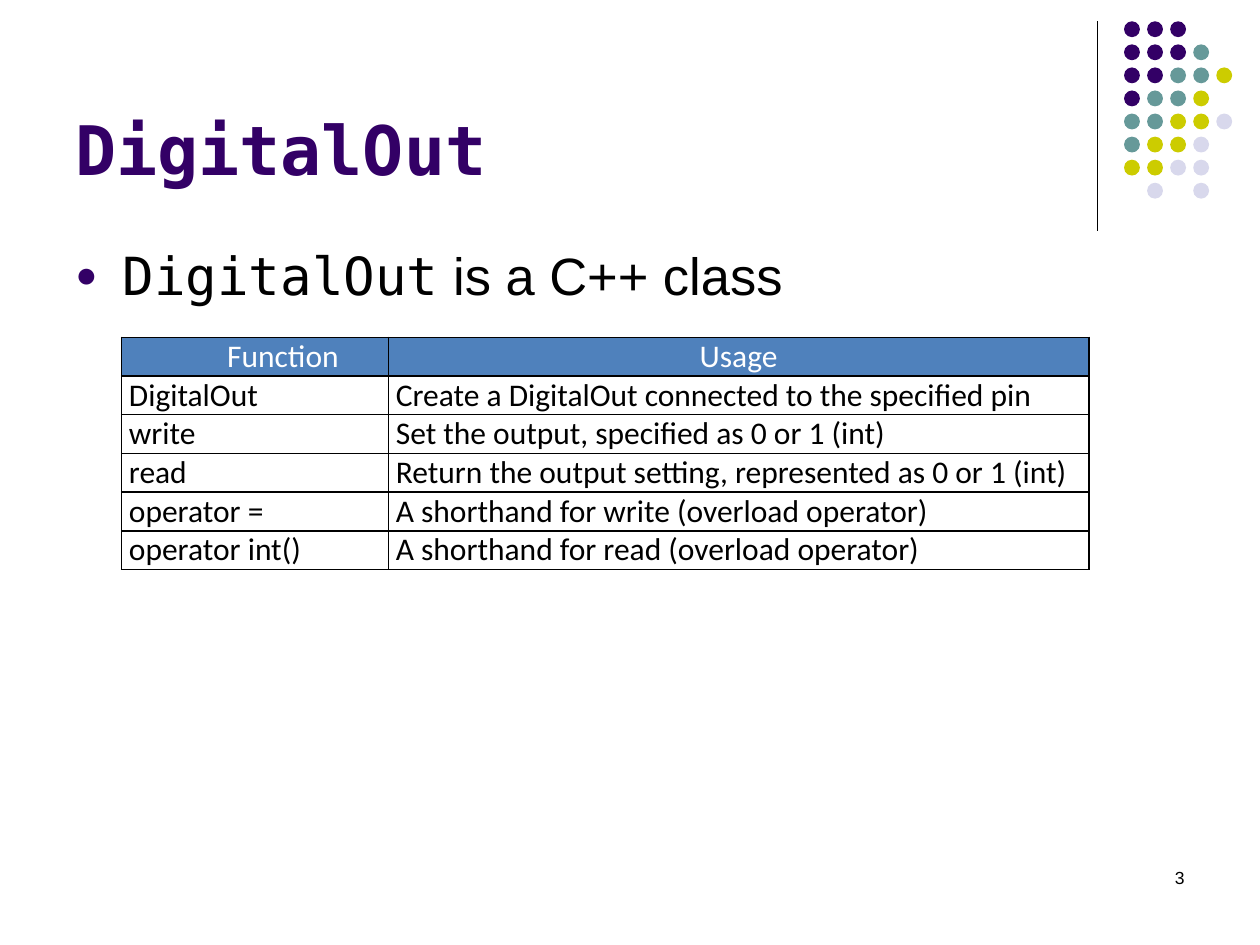
from lxml.etree import SubElement
from pptx import Presentation
from pptx.dml.color import RGBColor
from pptx.enum.shapes import MSO_CONNECTOR, MSO_SHAPE
from pptx.enum.text import MSO_ANCHOR, PP_ALIGN
from pptx.oxml import parse_xml
from pptx.oxml.ns import nsdecls, qn
from pptx.util import Cm, Pt

BLACK = RGBColor(0x00, 0x00, 0x00)
WHITE = RGBColor(0xFF, 0xFF, 0xFF)
PURPLE = RGBColor(0x33, 0x00, 0x66)
TEAL = RGBColor(0x66, 0x99, 0x99)
LIME = RGBColor(0xCC, 0xCC, 0x00)
LILAC = RGBColor(0xD8, 0xD8, 0xEC)
BLUE = RGBColor(0x4F, 0x81, 0xBC)
MONO, SANS, BODY = "DejaVu Sans Mono", "Arial", "Calibri"

TITLE = "DigitalOut"
POINT = [("DigitalOut", MONO), (" is a C++ class", SANS)]
PAGE = "3"
ROWS = [
    ("Function", "Usage"),
    ("DigitalOut", "Create a DigitalOut connected to the specified pin"),
    ("write", "Set the output, specified as 0 or 1 (int)"),
    ("read", "Return the output setting, represented as 0 or 1 (int)"),
    ("operator =", "A shorthand for write (overload operator)"),
    ("operator int()", "A shorthand for read (overload operator)"),
]
COLS = [5.38, 14.12]
ROW_H = 0.78
DOTS = ["PPP", "PPPT", "PPTTL", "PTTL", "TTLLV", "TLLV", "LLVV", " V V"]
HUES = {"P": PURPLE, "T": TEAL, "L": LIME, "V": LILAC}
DOT, STEP = 0.32, 0.465


def write(par, text, font=SANS, size=18, color=BLACK, bold=False,
          align=PP_ALIGN.LEFT, left=0, hang=0):
    run = par.add_run()
    run.text = text
    run.font.name = font
    run.font.size = Pt(size)
    run.font.bold = bold
    run.font.color.rgb = color
    par.alignment = align
    props = par._p.get_or_add_pPr()
    props.set("marL", str(Cm(left)))
    props.set("indent", str(Cm(-hang)))


def add_box(slide, x, y, w, h, anchor=MSO_ANCHOR.TOP):
    frame = slide.shapes.add_textbox(Cm(x), Cm(y), Cm(w), Cm(h)).text_frame
    frame.word_wrap = True
    frame.vertical_anchor = anchor
    return frame.paragraphs[0]


def add_mark(par):
    props = par._p.get_or_add_pPr()
    hue = SubElement(props, qn("a:buClr"))
    SubElement(hue, qn("a:srgbClr"), val=str(PURPLE))
    SubElement(props, qn("a:buSzPct"), val="70000")
    SubElement(props, qn("a:buFont"), typeface=SANS)
    SubElement(props, qn("a:buChar"), char="●")


def add_edge(cell):
    props = cell._tc.get_or_add_tcPr()
    for pos, side in enumerate("LRTB"):
        props.insert(pos, parse_xml(
            f'<a:ln{side} {nsdecls("a")} w="{Pt(1)}"><a:solidFill>'
            f'<a:srgbClr val="{BLACK}"/></a:solidFill></a:ln{side}>'))


def add_dots(slide):
    for row, line in enumerate(DOTS):
        for col, key in enumerate(line):
            if key in HUES:
                dot = slide.shapes.add_shape(
                    MSO_SHAPE.OVAL, Cm(22.66 + col * STEP),
                    Cm(0.43 + row * STEP), Cm(DOT), Cm(DOT))
                dot.shadow.inherit = False
                dot.fill.solid()
                dot.fill.fore_color.rgb = HUES[key]
                dot.line.fill.background()


def add_rule(slide):
    rule = slide.shapes.add_connector(
        MSO_CONNECTOR.STRAIGHT, Cm(22.12), Cm(0.43), Cm(22.12), Cm(4.65))
    rule.line.color.rgb = BLACK
    rule.line.width = Pt(0.75)
    SubElement(rule._element.spPr, qn("a:effectLst"))


def add_grid(slide):
    grid = slide.shapes.add_table(
        len(ROWS), len(COLS), Cm(2.45), Cm(6.8),
        Cm(sum(COLS)), Cm(ROW_H * len(ROWS))).table
    grid.first_row = grid.horz_banding = False
    for col, width in zip(grid.columns, COLS):
        col.width = Cm(width)
    for r, texts in enumerate(ROWS):
        grid.rows[r].height = Cm(ROW_H)
        for c, text in enumerate(texts):
            cell = grid.cell(r, c)
            cell.margin_left = cell.margin_right = 0
            cell.margin_top = cell.margin_bottom = 0
            look = dict(left=0.18, hang=0.03)
            if r == 0:
                cell.fill.solid()
                cell.fill.fore_color.rgb = BLUE
                look = (dict(left=2.16, hang=0.03) if c == 0
                        else dict(align=PP_ALIGN.CENTER))
                look["color"] = WHITE
            else:
                cell.fill.background()
            add_edge(cell)
            write(cell.text_frame.paragraphs[0], text, font=BODY, **look)


def main():
    deck = Presentation()
    deck.slide_width, deck.slide_height = Cm(25.4), Cm(19.05)
    slide = deck.slides.add_slide(deck.slide_layouts[6])
    add_rule(slide)
    add_dots(slide)
    head = add_box(slide, 1.27, 0.33, 20.96, 3.6, MSO_ANCHOR.BOTTOM)
    write(head, TITLE, font=MONO, size=39, color=PURPLE, bold=True)
    point = add_box(slide, 1.27, 4.78, 22.86, 12.24)
    for text, font in POINT:
        write(point, text, font=font, size=30, left=0.95, hang=0.95)
    add_mark(point)
    add_grid(slide)
    foot = add_box(slide, 18.2, 17.35, 5.93, 1.27)
    write(foot, PAGE, size=10, align=PP_ALIGN.RIGHT)
    deck.save("out.pptx")


if __name__ == "__main__":
    main()
